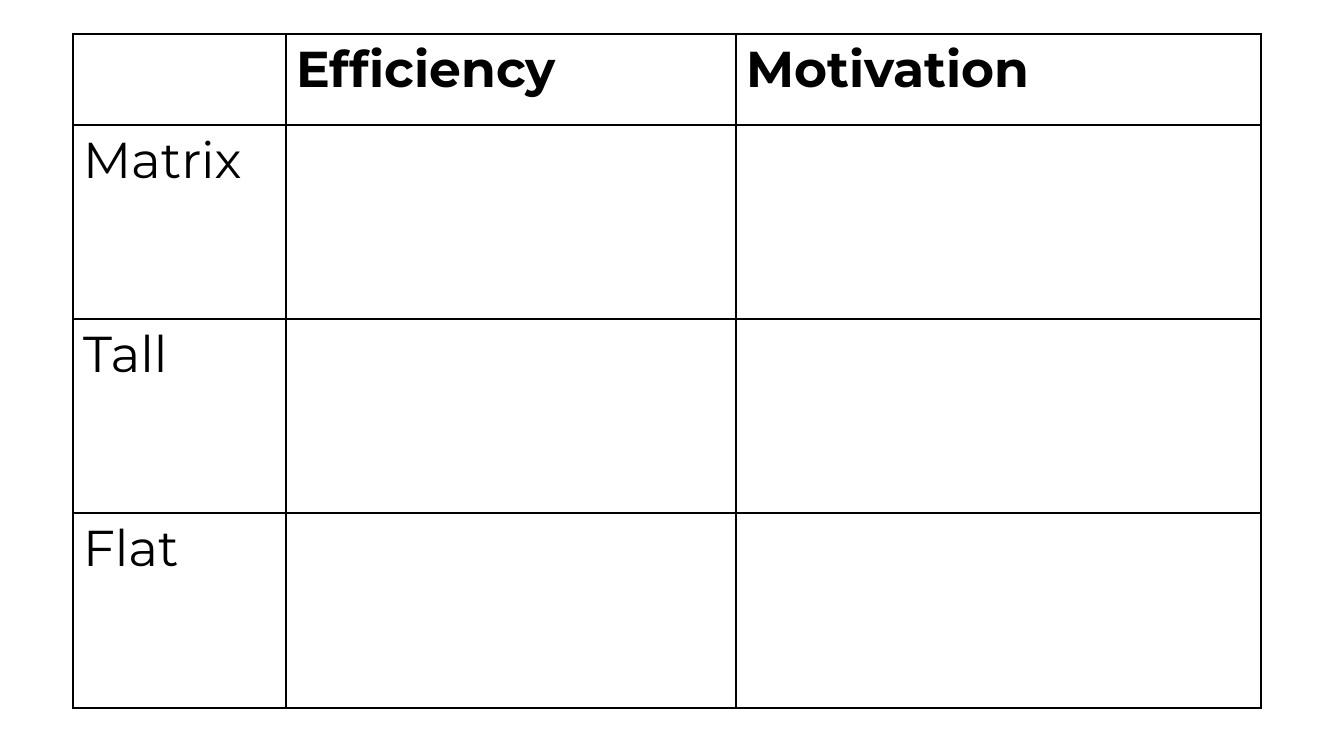
from lxml.etree import SubElement
from pptx import Presentation
from pptx.dml.color import RGBColor
from pptx.oxml.ns import qn
from pptx.util import Pt

PX = 914400 / 100.8
COLORS = {"paper": "FFFFFF", "ink": "000000"}
FONT = "Montserrat"
COLUMN_WIDTHS = [213, 450, 525]
ROW_HEIGHTS = [91, 194, 194, 195]
ROWS = [
    ["", "Efficiency", "Motivation"],
    ["Matrix", "", ""],
    ["Tall", "", ""],
    ["Flat", "", ""],
]


def px(length):
    return round(length * PX)


def add_borders(cell):
    properties = cell._tc.get_or_add_tcPr()
    for index, side in enumerate(("a:lnL", "a:lnR", "a:lnT", "a:lnB")):
        line = properties.makeelement(qn(side), {"w": str(Pt(1))})
        properties.insert(index, line)
        fill = SubElement(line, qn("a:solidFill"))
        SubElement(fill, qn("a:srgbClr"), val=COLORS["ink"])


def fill_cell(cell, text, bold):
    cell.fill.solid()
    cell.fill.fore_color.rgb = RGBColor.from_string(COLORS["paper"])
    add_borders(cell)
    if text:
        span = cell.text_frame.paragraphs[0].add_run()
        span.text = text
        span.font.name = FONT
        span.font.size = Pt(36)
        span.font.bold = bold
        span.font.color.rgb = RGBColor.from_string(COLORS["ink"])


def add_comparison_table(page, left, top):
    """Compare organisation structures by efficiency and motivation."""
    frame = page.shapes.add_table(
        len(ROWS), len(COLUMN_WIDTHS), px(left), px(top),
        px(sum(COLUMN_WIDTHS)), px(sum(ROW_HEIGHTS)))
    table = frame.table
    table.first_row = True
    table.horz_banding = False
    for column, width in zip(table.columns, COLUMN_WIDTHS):
        column.width = px(width)
    for row_index, (row, height) in enumerate(zip(table.rows, ROW_HEIGHTS)):
        row.height = px(height)
        for cell, text in zip(row.cells, ROWS[row_index]):
            fill_cell(cell, text, bold=row_index == 0)


def main():
    deck = Presentation()
    deck.slide_width, deck.slide_height = px(1344), px(756)
    page = deck.slides.add_slide(deck.slide_layouts[6])
    add_comparison_table(page, 73, 34)
    deck.save("out.pptx")


if __name__ == "__main__":
    main()
